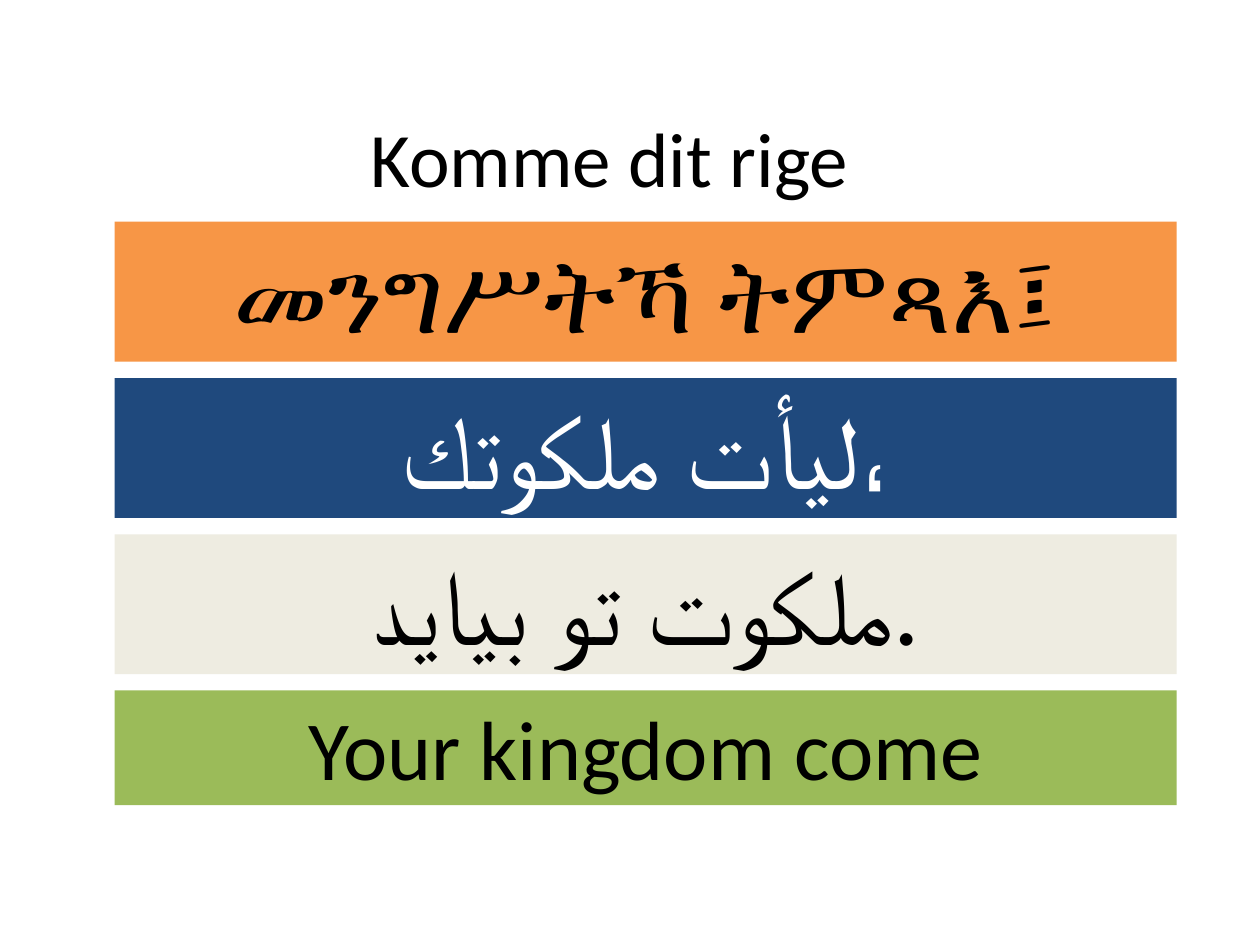
from pptx import Presentation
from pptx.dml.color import RGBColor
from pptx.enum.shapes import MSO_SHAPE
from pptx.enum.text import MSO_ANCHOR, MSO_AUTO_SIZE, PP_ALIGN
from pptx.util import Inches, Pt

RECTANGLE = MSO_SHAPE.RECTANGLE
TOP, MIDDLE = MSO_ANCHOR.TOP, MSO_ANCHOR.MIDDLE
CENTER = PP_ALIGN.CENTER
NO_AUTOFIT = MSO_AUTO_SIZE.NONE

THEME = {
    "font": "Calibri",
    "black": RGBColor(0x00, 0x00, 0x00),
    "white": RGBColor(0xFF, 0xFF, 0xFF),
    "orange": RGBColor(0xF7, 0x96, 0x46),
    "blue": RGBColor(0x1F, 0x49, 0x7D),
    "cream": RGBColor(0xEE, 0xEC, 0xE1),
    "green": RGBColor(0x9B, 0xBB, 0x59),
    "title_size": Pt(44),
    "script_size": Pt(60),
    "english_size": Pt(48),
}


def write_text(shape, text, size, color, anchor):
    frame = shape.text_frame
    frame_format = {"word_wrap": True, "auto_size": NO_AUTOFIT, "vertical_anchor": anchor}
    for name, value in frame_format.items():
        setattr(frame, name, value)
    paragraph = frame.paragraphs[0]
    paragraph.alignment = CENTER
    run = paragraph.add_run()
    run.text = text
    for name, value in {"name": THEME["font"], "size": size}.items():
        setattr(run.font, name, value)
    run.font.color.rgb = color


presentation = Presentation()
presentation.slide_width = Inches(10)
presentation.slide_height = Inches(7.5)
slide = presentation.slides.add_slide(presentation.slide_layouts[5])

# Danish title
title = slide.shapes.title
title_box = {"left": 0.59, "top": 0.44, "width": 8.5, "height": 1.61}
for name, value in title_box.items():
    setattr(title, name, Inches(value))
write_text(title, "Komme dit rige", THEME["title_size"], THEME["black"], MIDDLE)

# One band per translation, evenly spaced
BAND_LEFT, BAND_WIDTH = 0.91, 8.43
FIRST_TOP, BAND_STEP = 1.76, 1.24
bands = [
    ("መንግሥትኻ ትምጻእ፤", "orange", "black", "script_size", 1.11, MIDDLE),
    ("ليأت ملكوتك،", "blue", "white", "script_size", 1.11, TOP),
    ("ملکوت تو بیاید.", "cream", "black", "script_size", 1.11, TOP),
    ("Your kingdom come", "green", "black", "english_size", 0.91, TOP),
]
for index, (text, fill, color, size, height, anchor) in enumerate(bands):
    band = slide.shapes.add_shape(
        RECTANGLE,
        Inches(BAND_LEFT),
        Inches(FIRST_TOP + index * BAND_STEP),
        Inches(BAND_WIDTH),
        Inches(height),
    )
    band.shadow.inherit = False
    band.fill.solid()
    band.fill.fore_color.rgb = THEME[fill]
    band.line.fill.background()
    write_text(band, text, THEME[size], THEME[color], anchor)

presentation.save("out.pptx")
